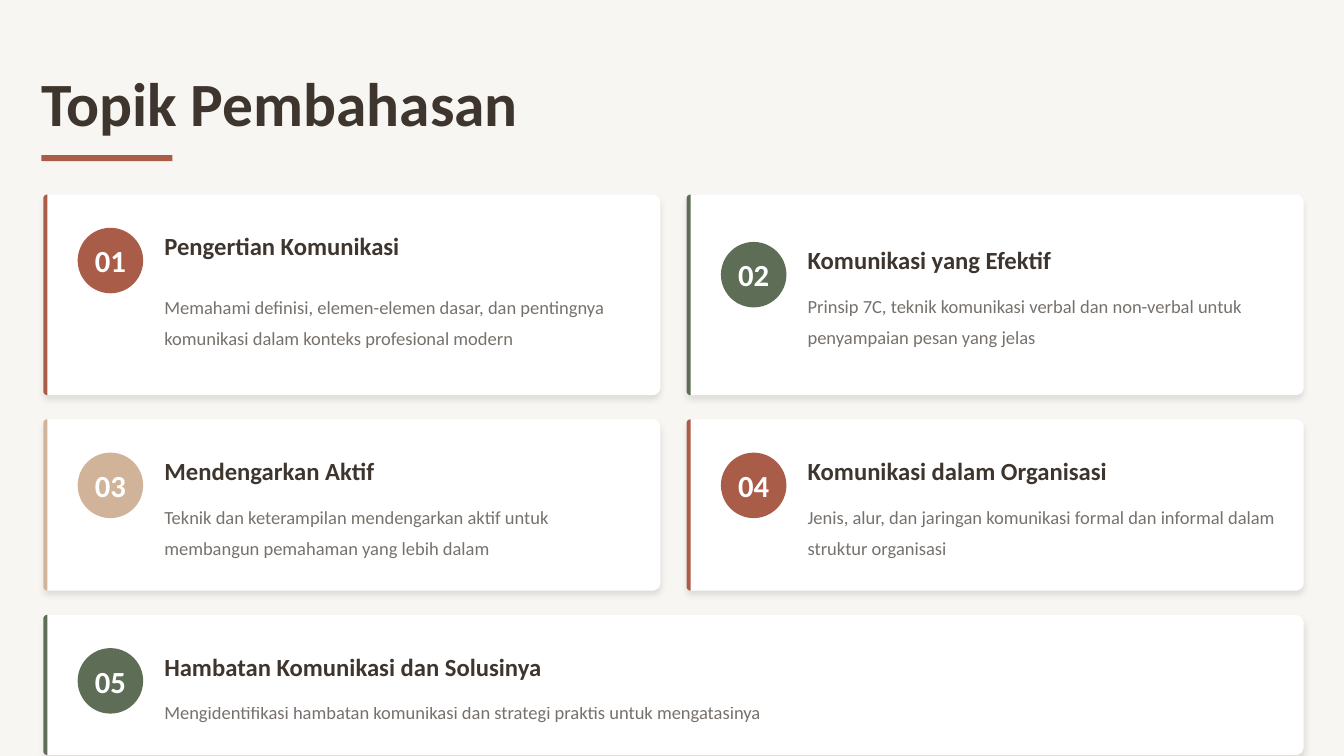
import math
from dataclasses import dataclass

import pptx
import pptx.dml.color
import pptx.enum.shapes
import pptx.enum.text
import pptx.oxml
import pptx.oxml.ns
import pptx.util

PX = 9144
ALIGN = pptx.enum.text.PP_ALIGN


@dataclass(frozen=True)
class Theme:
    font: str = "Calibri"
    background: str = "F8F6F2"
    card: str = "FFFFFF"
    ink: str = "3D352E"
    light: str = "FFFFFF"
    rust: str = "A95C48"
    green: str = "5E6D55"
    sand: str = "D1B399"
    title_size: float = 43.9
    number_size: float = 21.9
    heading_size: float = 17.6
    detail_size: float = 13.2


class Slide:
    def __init__(self, page, theme):
        self.page = page
        self.theme = theme
        page.background.fill.solid()
        page.background.fill.fore_color.rgb = self.color(theme.background)

    def color(self, value):
        return pptx.dml.color.RGBColor.from_string(value)

    def paint(self, shape, color):
        shape.shadow.inherit = False
        shape.fill.solid()
        shape.fill.fore_color.rgb = self.color(color)
        shape.line.fill.background()
        return shape

    def set_text(self, box, words, size, color, bold=True, spacing=1.0, align=ALIGN.LEFT, opacity=100):
        frame = box.text_frame
        frame.word_wrap = True
        frame.auto_size = pptx.enum.text.MSO_AUTO_SIZE.NONE
        frame.vertical_anchor = pptx.enum.text.MSO_ANCHOR.MIDDLE
        frame.margin_left = frame.margin_top = frame.margin_right = frame.margin_bottom = 0
        frame.text = words
        para = frame.paragraphs[0]
        para.alignment = align
        para.line_spacing = spacing
        para.font.name = self.theme.font
        para.font.size = pptx.util.Pt(size)
        para.font.bold = bold
        para.font.color.rgb = self.color(color)
        if opacity < 100:
            for fill in para._p.iter(pptx.oxml.ns.qn("a:srgbClr")):
                alpha = pptx.oxml.parse_xml(f'<a:alpha {pptx.oxml.ns.nsdecls("a")} val="{opacity * 1000}"/>')
                fill.append(alpha)

    def title(self, words, left, top, width, height):
        box = self.page.shapes.title
        box.left, box.top, box.width, box.height = (n * PX for n in (left, top, width, height))
        self.set_text(box, words, self.theme.title_size, self.theme.ink, spacing=0.8)

    def text(self, words, left, top, width, height, size, **style):
        box = self.page.shapes.add_textbox(left * PX, top * PX, width * PX, height * PX)
        self.set_text(box, words, size, self.theme.ink, **style)

    def shape(self, kind, left, top, width, height, color):
        shape = self.page.shapes.add_shape(kind, left * PX, top * PX, width * PX, height * PX)
        return self.paint(shape, color)

    def panel(self, left, top, width, height, color, left_radius, right_radius):
        right, bottom = left + width, top + height
        corners = [
            (left + left_radius, top + left_radius, left_radius, 180),
            (right - right_radius, top + right_radius, right_radius, 270),
            (right - right_radius, bottom - right_radius, right_radius, 0),
            (left + left_radius, bottom - left_radius, left_radius, 90),
        ]
        points = []
        for x, y, radius, start in corners:
            for step in range(0, 91 if radius else 1, 10):
                angle = math.radians(start + step)
                points.append((round((x + radius * math.cos(angle)) * PX),
                               round((y + radius * math.sin(angle)) * PX)))
        builder = self.page.shapes.build_freeform(*points[0])
        builder.add_line_segments(points[1:], close=True)
        return self.paint(builder.convert_to_shape(), color)

    def drop_shadow(self, shape):
        effects = shape._element.spPr.find(pptx.oxml.ns.qn("a:effectLst"))
        effects.append(pptx.oxml.parse_xml(
            f'<a:outerShdw {pptx.oxml.ns.nsdecls("a")} blurRad="{pptx.util.Pt(4.4)}" '
            f'dist="{pptx.util.Pt(2.9)}" dir="5400000" algn="ctr" rotWithShape="0">'
            '<a:srgbClr val="000000"><a:alpha val="10000"/></a:srgbClr></a:outerShdw>'))

    def badge(self, number, left, top, color):
        circle = self.shape(pptx.enum.shapes.MSO_SHAPE.OVAL, left, top, 65, 65, color)
        self.set_text(circle, number, self.theme.number_size, self.theme.light, align=ALIGN.CENTER)

    def card(self, number, topic, left, top, width, height):
        heading, detail, color, inset, text_width, detail_height = topic
        self.drop_shadow(self.panel(left, top, width, height, self.theme.card, 4, 8))
        self.panel(left, top, 4, height, color, 4, 0)
        row = top + inset
        self.badge(f"{number:02}", left + 34, row, color)
        self.text(heading, left + 120, row, text_width + 4, 33, self.theme.heading_size, spacing=1.1)
        self.text(detail, left + 120, row + 45, text_width, detail_height, self.theme.detail_size,
                  bold=False, spacing=1.4, opacity=70)


def main():
    deck = pptx.Presentation()
    deck.slide_width, deck.slide_height = 1333 * PX, 750 * PX
    theme = Theme()
    slide = Slide(deck.slides.add_slide(deck.slide_layouts[5]), theme)
    slide.title("Topik Pembahasan", 41, 77, 1283, 61)
    slide.shape(pptx.enum.shapes.MSO_SHAPE.RECTANGLE, 41, 154, 130, 6, theme.rust)

    rows = [
        (199, [
            ("Pengertian Komunikasi",
             "Memahami definisi, elemen-elemen dasar, dan pentingnya komunikasi dalam konteks profesional modern",
             theme.rust, 33, 468, 89),
            ("Komunikasi yang Efektif",
             "Prinsip 7C, teknik komunikasi verbal dan non-verbal untuk penyampaian pesan yang jelas",
             theme.green, 47, 468, 60),
        ]),
        (170, [
            ("Mendengarkan Aktif",
             "Teknik dan keterampilan mendengarkan aktif untuk membangun pemahaman yang lebih dalam",
             theme.sand, 33, 468, 60),
            ("Komunikasi dalam Organisasi",
             "Jenis, alur, dan jaringan komunikasi formal dan informal dalam struktur organisasi",
             theme.rust, 33, 468, 60),
        ]),
        (139, [
            ("Hambatan Komunikasi dan Solusinya",
             "Mengidentifikasi hambatan komunikasi dan strategi praktis untuk mengatasinya",
             theme.green, 33, 646, 29),
        ]),
    ]
    left, top, full_width, column_gap, row_gap = 43, 193, 1250, 26, 24
    number = 1
    for height, topics in rows:
        width = (full_width - column_gap * (len(topics) - 1)) // len(topics)
        for column, topic in enumerate(topics):
            slide.card(number, topic, left + column * (width + column_gap), top, width, height)
            number += 1
        top += height + row_gap

    deck.save("out.pptx")


if __name__ == "__main__":
    main()
